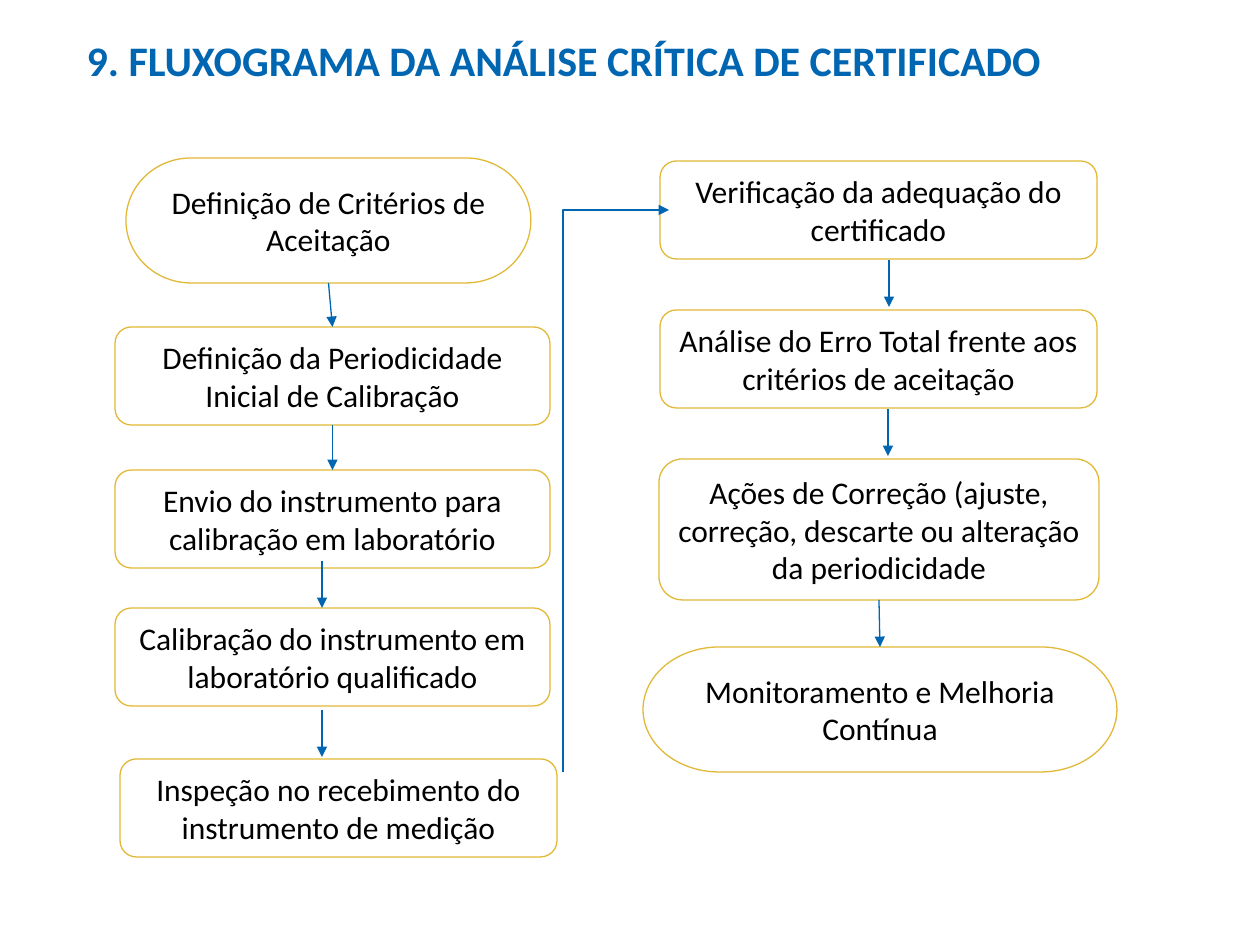
from dataclasses import dataclass

from lxml import etree
from pptx import Presentation
from pptx.dml.color import RGBColor
from pptx.enum.shapes import MSO_CONNECTOR, MSO_SHAPE
from pptx.enum.text import MSO_ANCHOR, MSO_AUTO_SIZE, PP_ALIGN
from pptx.oxml.ns import qn
from pptx.util import Pt

STRAIGHT, ELBOW = MSO_CONNECTOR.STRAIGHT, MSO_CONNECTOR.ELBOW
TERMINATOR = MSO_SHAPE.FLOWCHART_TERMINATOR
PROCESS = MSO_SHAPE.FLOWCHART_ALTERNATE_PROCESS
TOP, MIDDLE = MSO_ANCHOR.TOP, MSO_ANCHOR.MIDDLE
CENTER, JUSTIFY = PP_ALIGN.CENTER, PP_ALIGN.JUSTIFY
NO_FIT, GROW = MSO_AUTO_SIZE.NONE, MSO_AUTO_SIZE.SHAPE_TO_FIT_TEXT
SIDE_TOP, SIDE_BOTTOM = 0, 2
TITLE_ONLY = 5
SCALE = 914400 / 126


@dataclass(frozen=True)
class Theme:
    font: str = "Calibri"
    blue: RGBColor = RGBColor(0x00, 0x66, 0xB2)
    gold: RGBColor = RGBColor(0xE1, 0xB9, 0x37)
    white: RGBColor = RGBColor(0xFF, 0xFF, 0xFF)
    black: RGBColor = RGBColor(0x00, 0x00, 0x00)
    title_size: Pt = Pt(24)
    body_size: Pt = Pt(18)
    line: Pt = Pt(0.75)


THEME = Theme()


def px(n):
    return round(n * SCALE)


def set_font(p, size, color, bold=False):
    p.font.name = THEME.font
    p.font.size = size
    p.font.color.rgb = color
    p.font.bold = bold


def add_title(s, box, text, indent):
    sp = s.shapes.title
    sp.left, sp.top, sp.width, sp.height = map(px, box)
    tf = sp.text_frame
    tf.text = text
    tf.word_wrap = True
    tf.auto_size = NO_FIT
    tf.vertical_anchor = TOP
    p = tf.paragraphs[0]
    p.alignment = JUSTIFY
    p_pr = p._p.get_or_add_pPr()
    p_pr.set("marL", str(px(indent)))
    p_pr.set("indent", "0")
    set_font(p, THEME.title_size, THEME.blue, True)


def add_node(s, kind, box, text):
    sp = s.shapes.add_shape(kind, *map(px, box))
    sp.shadow.inherit = False
    sp.fill.solid()
    sp.fill.fore_color.rgb = THEME.white
    sp.line.color.rgb = THEME.gold
    sp.line.width = THEME.line
    tf = sp.text_frame
    tf.text = text
    tf.word_wrap = True
    tf.auto_size = GROW
    tf.vertical_anchor = MIDDLE
    p = tf.paragraphs[0]
    p.alignment = CENTER
    set_font(p, THEME.body_size, THEME.black)
    return sp


def add_arrow(s, kind, x1, y1, x2, y2):
    c = s.shapes.add_connector(kind, px(x1), px(y1), px(x2), px(y2))
    c.line.color.rgb = THEME.blue
    c.line.width = THEME.line
    etree.SubElement(c.line._get_or_add_ln(), qn("a:tailEnd"), type="triangle")
    etree.SubElement(c._element.spPr, qn("a:effectLst"))
    return c


def add_column(s, box, nodes, joined, arrows):
    left, top = box[:2]
    shapes = [add_node(s, kind, (left + x, top + y, w, h), text)
              for kind, x, y, w, h, text in nodes]
    for i in joined:
        c = add_arrow(s, STRAIGHT, left, top, left, top)
        c.begin_connect(shapes[i], SIDE_BOTTOM)
        c.end_connect(shapes[i + 1], SIDE_TOP)
    for x, y1, y2 in arrows:
        add_arrow(s, STRAIGHT, left + x, top + y1, left + x, top + y2)


def add_corner_arrow(s, box):
    left, top, w, h = box
    cx, cy = left + w / 2, top + h / 2
    c = add_arrow(s, ELBOW, cx + h / 2, cy + w / 2, cx - h / 2, cy - w / 2)
    sp_pr = c._element.spPr
    sp_pr.find(qn("a:xfrm")).set("rot", "5400000")
    sp_pr.find(qn("a:prstGeom")).set("prst", "bentConnector2")


LEFT_NODES = [
    (TERMINATOR, 11, 0, 405, 125, "Definição de Critérios de Aceitação"),
    (PROCESS, 0, 169, 435, 98, "Definição da Periodicidade Inicial de Calibração"),
    (PROCESS, 0, 312, 435, 98, "Envio do instrumento para calibração em laboratório"),
    (PROCESS, 0, 450, 435, 98, "Calibração do instrumento em laboratório qualificado"),
    (PROCESS, 5, 601, 437, 98, "Inspeção no recebimento do instrumento de medição"),
]
RIGHT_NODES = [
    (PROCESS, 17, 0, 437, 98, "Verificação da adequação do certificado"),
    (PROCESS, 17, 149, 437, 98, "Análise do Erro Total frente aos critérios de aceitação"),
    (PROCESS, 16, 298, 440, 141,
     "Ações de Correção (ajuste, correção, descarte ou alteração da periodicidade"),
    (TERMINATOR, 0, 486, 474, 125, "Monitoramento e Melhoria Contínua"),
]


def main():
    prs = Presentation()
    prs.slide_width, prs.slide_height = px(1260), px(945)
    s = prs.slides.add_slide(prs.slide_layouts[TITLE_ONLY])
    add_title(s, (25, 28, 1043, 89),
              "9. FLUXOGRAMA DA ANÁLISE CRÍTICA DE CERTIFICADO", 49)
    add_column(s, (115, 158, 442, 699), LEFT_NODES, (0, 1),
               [(207, 403, 450), (207, 552, 599)])
    add_column(s, (643, 161, 474, 611), RIGHT_NODES, (2,),
               [(246, 99, 146), (245, 248, 295)])
    add_corner_arrow(s, (563, 210, 106, 562))
    prs.save("out.pptx")


if __name__ == "__main__":
    main()
